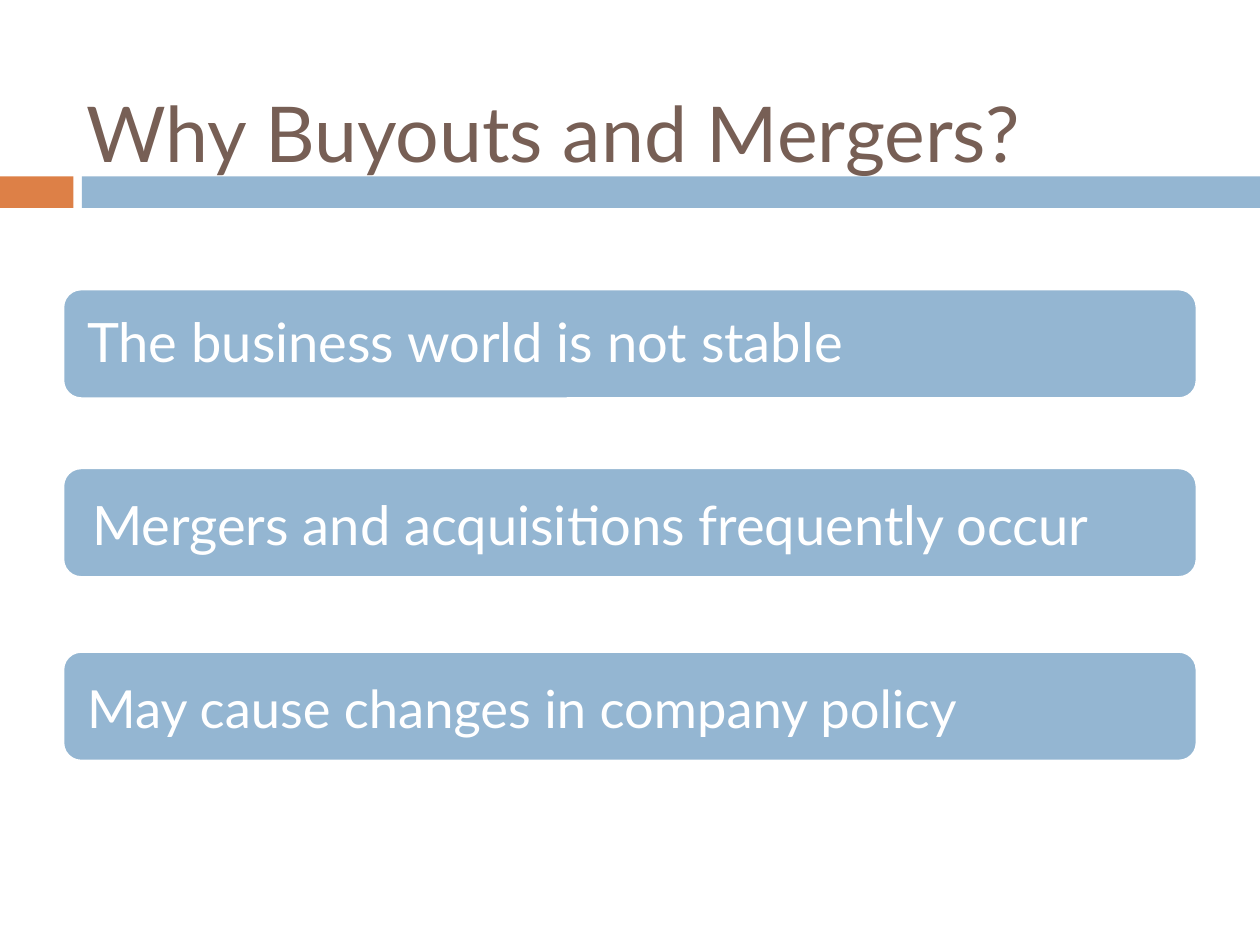
from dataclasses import dataclass

import pptx
import pptx.dml.color
import pptx.enum.shapes
import pptx.enum.text
import pptx.util

Pt = pptx.util.Pt
RGB = pptx.dml.color.RGBColor.from_string
SHAPE = pptx.enum.shapes.MSO_SHAPE
MIDDLE = pptx.enum.text.MSO_ANCHOR.MIDDLE
LEFT = pptx.enum.text.PP_ALIGN.LEFT


@dataclass(frozen=True)
class Theme:
    font: str = "Lato"
    title_color: str = "775F55"
    accent: str = "DD8047"
    bar: str = "94B6D2"
    white: str = "FFFFFF"
    title_size: float = 44
    long_size: float = 31
    short_size: float = 30
    outline: float = 1.5


THEME = Theme()


def place(sp, x, y, w, h):
    sp.left, sp.top, sp.width, sp.height = Pt(x), Pt(y), Pt(w), Pt(h)


def add_block(shapes, kind, x, y, w, h, fill, line=None):
    sp = shapes.add_shape(kind, Pt(x), Pt(y), Pt(w), Pt(h))
    sp.shadow.inherit = False
    sp.fill.solid()
    sp.fill.fore_color.rgb = RGB(fill)
    if line:
        sp.line.color.rgb = RGB(line)
        sp.line.width = Pt(THEME.outline)
    else:
        sp.line.fill.background()
    return sp


def write(tf, text, size, color):
    tf.word_wrap = True
    tf.auto_size = pptx.enum.text.MSO_AUTO_SIZE.NONE
    tf.vertical_anchor = MIDDLE
    p = tf.paragraphs[0]
    p.text = text
    p.alignment = LEFT
    p.font.name = THEME.font
    p.font.size = Pt(size)
    p.font.color.rgb = RGB(color)
    return p


def add_band(s, x, y, w, h):
    tab, gap = 42, 4.8
    add_block(s.shapes, SHAPE.RECTANGLE, x, y, tab, h, THEME.accent)
    add_block(s.shapes, SHAPE.RECTANGLE, x + tab + gap, y, w - tab - gap, h, THEME.bar)


def add_title(s, text, x, y, w, h):
    sp = s.shapes.title
    place(sp, x, y, w, h)
    write(sp.text_frame, text, THEME.title_size, THEME.title_color)


def add_statement(s, text, size, x, y, w, h, dx, dy):
    group = s.shapes.add_group_shape()
    add_block(group.shapes, SHAPE.ROUNDED_RECTANGLE, x, y, w, h, THEME.bar, THEME.white)
    sp = group.shapes.add_textbox(Pt(x + dx), Pt(y + dy), Pt(w - 6.5), Pt(h - 5.8))
    tf = sp.text_frame
    tf.margin_left = tf.margin_right = tf.margin_top = tf.margin_bottom = Pt(10.8)
    p = write(tf, text, size, THEME.white)
    p.line_spacing = 0.9


def main():
    prs = pptx.Presentation()
    prs.slide_width, prs.slide_height = Pt(720), Pt(540)
    s = prs.slides.add_slide(prs.slide_layouts[5])
    add_band(s, 0, 100.8, 720, 18)
    add_title(s, "Why Buyouts and Mergers?", 42, 36, 642, 78)
    statements = [
        ("The business world is not stable", THEME.long_size, 165.2, 3, 3.4),
        ("Mergers and acquisitions frequently occur", THEME.long_size, 267.4, 6, 5.8),
        ("May cause changes in company policy", THEME.short_size, 372.3, 3, 5.8),
    ]
    for text, size, y, dx, dy in statements:
        add_statement(s, text, size, 36, y, 648, 62.6, dx, dy)
    prs.save("out.pptx")


if __name__ == "__main__":
    main()
